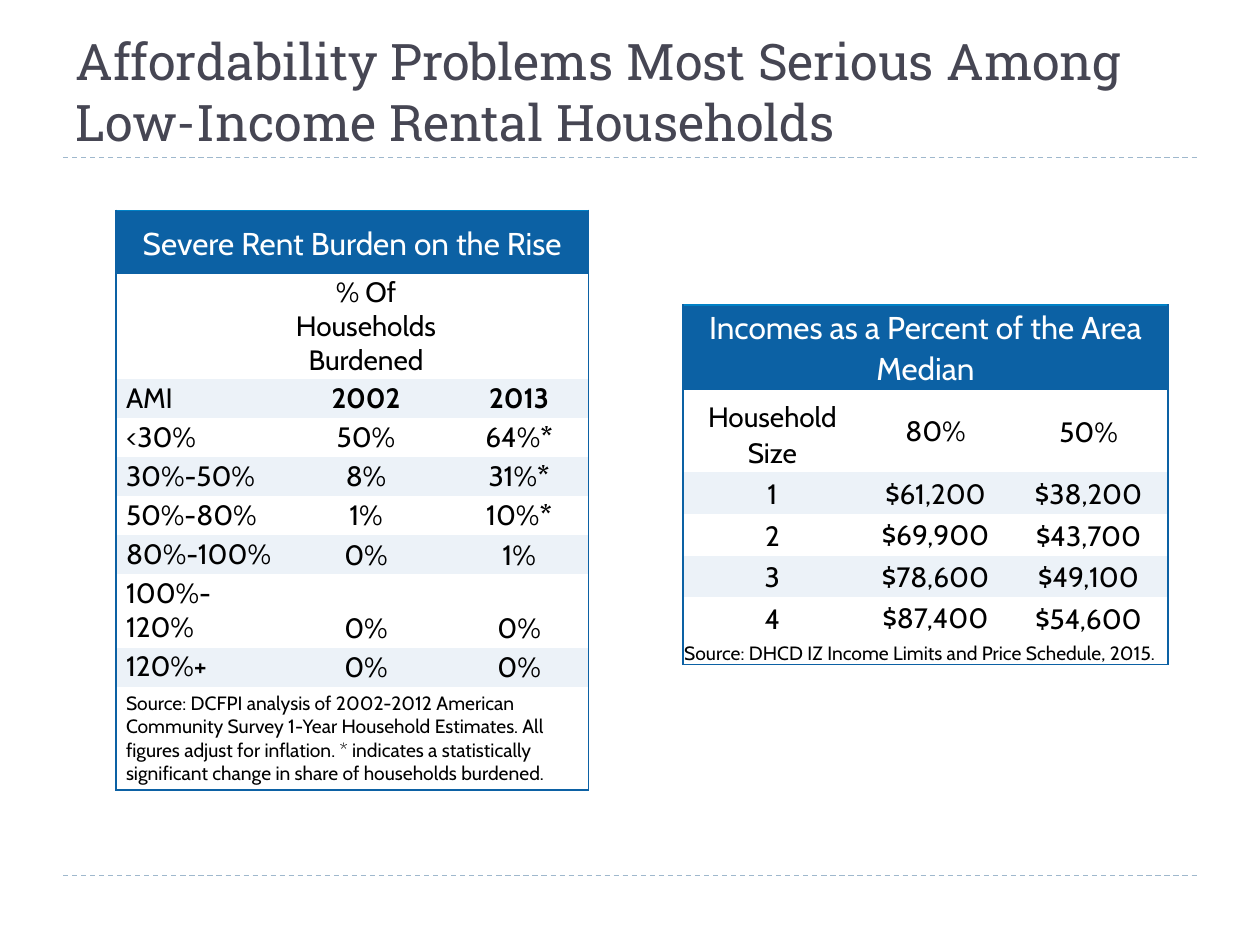
from pptx import Presentation
from pptx.dml.color import RGBColor
from pptx.enum.dml import MSO_LINE
from pptx.enum.shapes import MSO_CONNECTOR
from pptx.enum.text import MSO_ANCHOR, PP_ALIGN
from pptx.oxml.ns import qn
from pptx.util import Inches, Pt
from lxml.etree import SubElement

COLORS = {"title": "464653", "rule": "9FB8CD", "blue": "0C61A4", "top": "0081C6",
          "band": "ECF2F8", "white": "FFFFFF", "black": "000000"}
WIDE = (0.08, 0.02, 0.08, 0.02)
TIGHT = (0.01, 0.01, 0.01, 0)


def color(name):
    return RGBColor.from_string(COLORS[name])


def write(tf, runs, size=16, font="Cabin", fill="black", align=PP_ALIGN.LEFT, spacing=None):
    p = tf.paragraphs[0]
    p.alignment = align
    if spacing:
        p.line_spacing = spacing
    for text, bold in runs:
        r = p.add_run()
        r.text = text
        r.font.size, r.font.name, r.font.bold = Pt(size), font, bold
        r.font.color.rgb = color(fill)


class Deck:
    """Holds the presentation style and the current slide."""

    def __init__(self):
        self.prs = Presentation()
        self.prs.slide_width, self.prs.slide_height = Inches(10), Inches(7.5)
        self.s = self.prs.slides.add_slide(self.prs.slide_layouts[6])

    def rule(self, y):
        sp = self.s.shapes.add_connector(
            MSO_CONNECTOR.STRAIGHT, Inches(0.5), Inches(y), Inches(9.5), Inches(y))
        sp.line.color.rgb = color("rule")
        sp.line.width = Pt(0.75)
        sp.line.dash_style = MSO_LINE.DASH
        SubElement(sp._element.spPr, qn("a:effectLst"))

    def title(self, text):
        sp = self.s.shapes.add_textbox(Inches(0.5), Inches(0.17), Inches(9), Inches(1.08))
        tf = sp.text_frame
        tf.word_wrap = True
        tf.vertical_anchor = MSO_ANCHOR.BOTTOM
        write(tf, [(text, False)], size=28.8, font="Roboto Slab", fill="title")

    def cell(self, cell, runs, edges, bg="white", pad=WIDE, anchor=MSO_ANCHOR.MIDDLE, **fmt):
        tcPr = cell._tc.get_or_add_tcPr()
        for side in "LRTB":
            ln = SubElement(tcPr, qn(f"a:ln{side}"), w=str(Pt(1)))
            if side in edges:
                paint = SubElement(ln, qn("a:solidFill"))
                SubElement(paint, qn("a:srgbClr"), val=COLORS[edges[side]])
            else:
                SubElement(ln, qn("a:noFill"))
        cell.fill.solid()
        cell.fill.fore_color.rgb = color(bg)
        (cell.margin_left, cell.margin_top,
         cell.margin_right, cell.margin_bottom) = map(Inches, pad)
        cell.vertical_anchor = anchor
        write(cell.text_frame, runs, **fmt)

    def table(self, x, y, cols, heights, heading, body, source, head_pad, source_pad,
              last_pad=WIDE, first_align=PP_ALIGN.CENTER, first_anchor=MSO_ANCHOR.MIDDLE,
              anchor=MSO_ANCHOR.MIDDLE, bold_row=None, spacing=None):
        n, last = len(heights), len(cols) - 1
        t = self.s.shapes.add_table(n, len(cols), Inches(x), Inches(y),
                                    Inches(sum(cols)), Inches(sum(heights))).table
        t.first_row = t.horz_banding = False
        for col, w in zip(t.columns, cols):
            col.width = Inches(w)
        for row, h in zip(t.rows, heights):
            row.height = Inches(h)
        sides = {"L": "blue", "R": "blue", "B": "blue"}
        spans = [
            (0, heading, {**sides, "T": "top"},
             dict(bg="blue", pad=head_pad, size=18, fill="white", align=PP_ALIGN.CENTER)),
            (n - 1, source, sides, dict(pad=source_pad, anchor=MSO_ANCHOR.TOP, size=11)),
        ]
        for i, text, edges, fmt in spans:
            t.cell(i, 0).merge(t.cell(i, last))
            for j in range(last + 1):
                runs = [] if j else [(text, False)]
                self.cell(t.cell(i, j), runs, edges, spacing=spacing, **fmt)
        for i, values in enumerate(body, 1):
            for j, value in enumerate(values):
                edges = {"L": "blue"} if j == 0 else {"R": "blue"} if j == last else {}
                if i == 1:
                    edges["T"] = "blue"
                runs = [(value.rstrip("*"), j > 0 and i == bold_row)] if value else []
                if value.endswith("*"):
                    runs.append(("*", True))
                self.cell(t.cell(i, j), runs, edges, bg="white" if i % 2 else "band",
                          pad=last_pad if j == last else WIDE,
                          anchor=anchor if j else first_anchor,
                          align=PP_ALIGN.CENTER if j else first_align, spacing=spacing)


def main():
    deck = Deck()
    deck.rule(6.95)
    deck.rule(1.25)
    deck.title("Affordability Problems Most Serious Among Low-Income Rental Households")
    deck.table(
        0.92, 1.67, [1.32, 1.33, 1.1], [0.5, 0.84] + [0.31] * 5 + [0.58, 0.31, 0.82],
        "Severe Rent Burden on the Rise",
        [("", "% Of Households Burdened", ""),
         ("AMI", "2002", "2013"),
         ("<30%", "50%", "64%*"),
         ("30%-50%", "8%", "31%*"),
         ("50%-80%", "1%", "10%*"),
         ("80%-100%", "0%", "1%"),
         ("100%-120%", "0%", "0%"),
         ("120%+", "0%", "0%")],
        "Source: DCFPI analysis of 2002-2012 American Community Survey 1-Year Household "
        "Estimates. All figures adjust for inflation. * indicates a statistically "
        "significant change in share of households burdened.",
        head_pad=(0.08, 0.04, 0.08, 0), source_pad=(0.08, 0.04, 0.08, 0.04),
        first_align=PP_ALIGN.LEFT, first_anchor=MSO_ANCHOR.TOP,
        anchor=MSO_ANCHOR.BOTTOM, bold_row=2)
    deck.table(
        5.42, 2.42, [1.42, 1.17, 1.26], [0.67, 0.66] + [0.33] * 4 + [0.19],
        "Incomes as a Percent of the Area Median",
        [("Household Size", "80%", "50%"),
         ("1", "$61,200", "$38,200"),
         ("2", "$69,900", "$43,700"),
         ("3", "$78,600", "$49,100"),
         ("4", "$87,400", "$54,600")],
        "Source: DHCD IZ Income Limits and Price Schedule, 2015.",
        head_pad=TIGHT, source_pad=TIGHT, last_pad=TIGHT,
        first_anchor=MSO_ANCHOR.BOTTOM, spacing=1.06)
    deck.prs.save("out.pptx")


if __name__ == "__main__":
    main()
